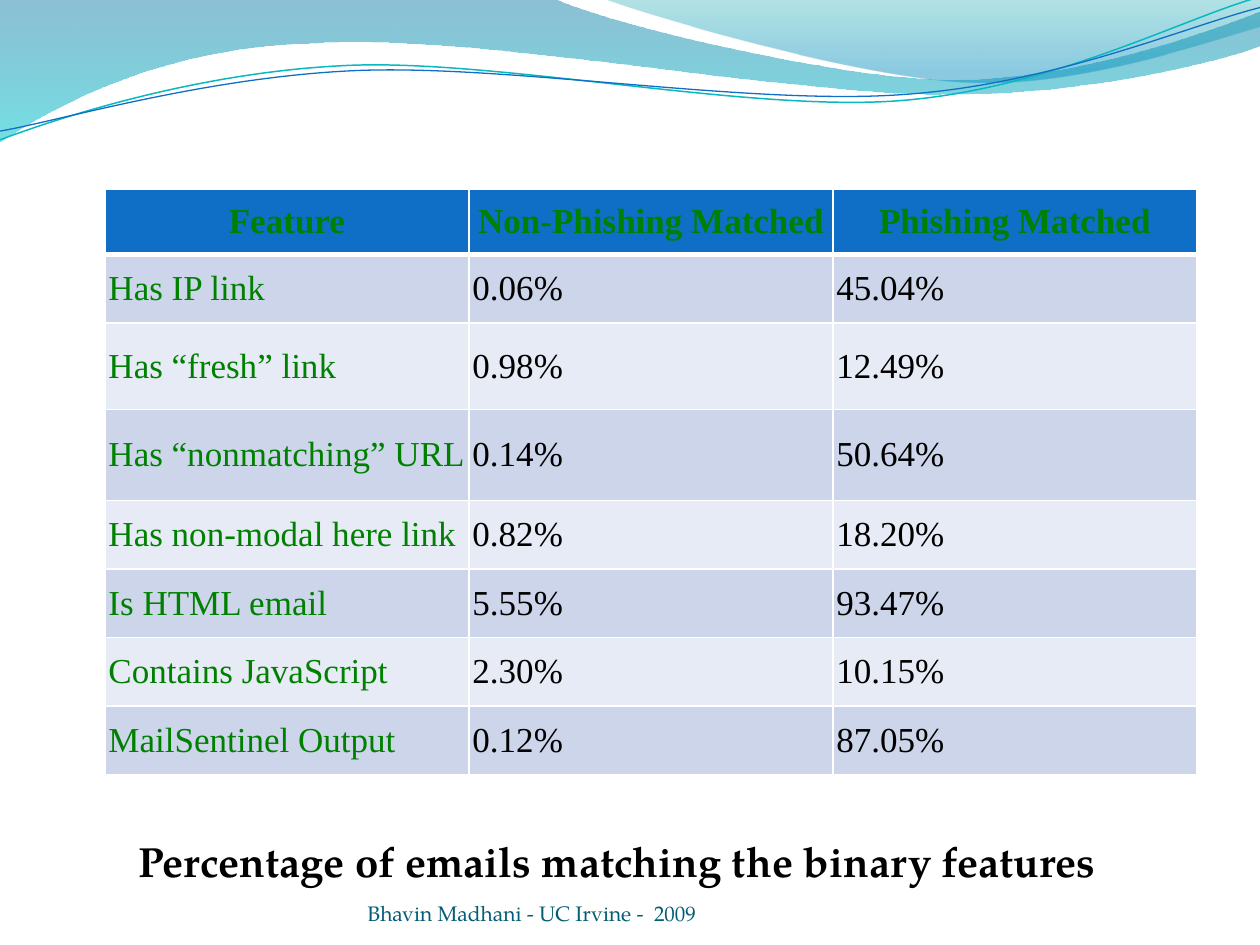
from lxml.etree import SubElement
from pptx import Presentation
from pptx.dml.color import RGBColor
from pptx.enum.text import MSO_ANCHOR as Anchor, MSO_AUTO_SIZE as AutoSize, PP_ALIGN as Align
from pptx.oxml.ns import qn
from pptx.util import Pt

COLORS = {
    "white": "FFFFFF", "black": "000000", "green": "008000", "footer": "045D75",
    "header": "0F6FC6", "odd": "CCD5EA", "even": "E7EBF5",
    "deep": "0074A1", "cyan": "00C6CF", "teal": "00A1A9", "sky": "008BBF",
    "aqua": "0AB8BF",
}
SERIF, TABLE_FONT = "TeX Gyre Pagella", "Times New Roman"

ROWS = [
    ("Feature", "Non-Phishing Matched", "Phishing Matched"),
    ("Has IP link", "0.06%", "45.04%"),
    ("Has “fresh” link", "0.98%", "12.49%"),
    ("Has “nonmatching” URL", "0.14%", "50.64%"),
    ("Has non-modal here link", "0.82%", "18.20%"),
    ("Is HTML email", "5.55%", "93.47%"),
    ("Contains JavaScript", "2.30%", "10.15%"),
    ("MailSentinel Output", "0.12%", "87.05%"),
]
ROW_HEIGHTS = [37.5, 39, 49.5, 52] + [39.2] * 4
CAPTION = "Percentage of emails matching the binary features"
FOOTER = "Bhavin Madhani - UC Irvine -  2009"

WAVES = [
    ([(0, 0), (316.8, -0.7), (342.7, 12.2, 478.1, 45.4, 545.8, 45.4),
      (614.2, 45.4, 689.8, 18.7, 720, 6.5), (720.7, 25.9),
      (707.8, 31.7, 626.4, 54.7, 537.1, 54), (447.8, 54, 275, 20.2, 185, 24.5),
      (92.9, 25.9, 33.1, 59.8, -0.7, 81.4), (0, 0)],
     [(0, "deep", 45), (1, "cyan", 55)]),
    ([(344.9, -0.7), (366.5, 7.9, 491, 44.6, 553.7, 46.8),
      (616.3, 49.7, 691.9, 23, 720, 15.1), (720, 0), (344.9, -0.7)],
     [(0, "teal", 30), (0.8, "sky", 45)]),
]
STRANDS = [
    ([(0, 79.9), (34.6, 67, 113.8, 41, 199.4, 37.4),
      (284.4, 33.8, 427, 64.1, 513.4, 57.6),
      (599.8, 51.1, 675.4, 10.8, 718.6, -1.4)], "aqua", 0.85),
    ([(0, 74.9), (33.8, 69.1, 118.1, 43.9, 203.8, 40.3),
      (290.2, 36.7, 429.8, 60.5, 516.2, 54),
      (601.9, 48.2, 677.5, 15.1, 720, 4.3)], "header", 0.75),
]


def rgb(name):
    return RGBColor.from_string(COLORS[name])


def add_outline(s, segments, close):
    points = [(Pt(seg[i]), Pt(seg[i + 1])) for seg in segments for i in range(0, len(seg), 2)]
    builder = s.shapes.build_freeform(*points[0], scale=1.0)
    builder.add_line_segments(points[1:], close=close)
    sp = builder.convert_to_shape()
    sp.shadow.inherit = False
    corners = iter(list(sp._element.spPr.iter(qn("a:lnTo"))))
    for seg in segments[1:]:
        first = next(corners)
        if len(seg) == 6:
            first.tag = qn("a:cubicBezTo")
            for _ in range(2):
                corner = next(corners)
                first.append(corner[0])
                corner.getparent().remove(corner)
    return sp


def add_wave(s, segments, stops):
    sp = add_outline(s, segments, True)
    sp.fill.gradient()
    sp.fill.gradient_angle = 270
    for stop, (position, color, _) in zip(sp.fill.gradient_stops, stops):
        stop.position = position
        stop.color.rgb = rgb(color)
    for clr, (_, _, opacity) in zip(sp._element.spPr.iter(qn("a:srgbClr")), stops):
        SubElement(clr, qn("a:alpha"), val=str(opacity * 1000))
    sp.line.fill.background()


def add_strand(s, segments, color, width):
    sp = add_outline(s, segments, False)
    sp.fill.background()
    sp.line.color.rgb = rgb(color)
    sp.line.width = Pt(width)


def style(p, font, size, color, bold=False):
    for r in p.runs:
        r.font.name, r.font.size, r.font.bold = font, Pt(size), bold
        r.font.color.rgb = rgb(color)


def set_borders(cell, row):
    tc_pr = cell._tc.get_or_add_tcPr()
    widths = {"L": 1, "R": 1, "T": 3 if row == 1 else 1, "B": 3 if row == 0 else 1}
    for i, (side, width) in enumerate(widths.items()):
        ln = SubElement(tc_pr, qn(f"a:ln{side}"), w=str(Pt(width)))
        SubElement(SubElement(ln, qn("a:solidFill")), qn("a:srgbClr"), val=COLORS["white"])
        tc_pr.insert(i, ln)


def add_feature_table(s):
    table = s.shapes.add_table(len(ROWS), len(ROWS[0]), Pt(60), Pt(108),
                               Pt(624), Pt(sum(ROW_HEIGHTS))).table
    for i, (texts, height) in enumerate(zip(ROWS, ROW_HEIGHTS)):
        table.rows[i].height = Pt(height)
        for j, text in enumerate(texts):
            cell = table.cell(i, j)
            cell.text = text
            cell.vertical_anchor = Anchor.MIDDLE
            cell.margin_left = cell.margin_right = Pt(2)
            cell.margin_top = cell.margin_bottom = Pt(2)
            cell.fill.solid()
            cell.fill.fore_color.rgb = rgb("header" if i == 0 else "odd" if i % 2 else "even")
            set_borders(cell, i)
            p = cell.text_frame.paragraphs[0]
            p.alignment = Align.LEFT if i else Align.CENTER
            style(p, TABLE_FONT, 20, "black" if i and j else "green", i == 0)


def add_caption(s):
    sp = s.placeholders[1]
    sp.left, sp.top, sp.width, sp.height = Pt(36), Pt(474), Pt(648), Pt(24)
    tf = sp.text_frame
    tf.text = CAPTION
    tf.auto_size = AutoSize.NONE
    tf.vertical_anchor = Anchor.TOP
    p = tf.paragraphs[0]
    p.space_before = Pt(4.8)
    p_pr = p._p.get_or_add_pPr()
    p_pr.set("marL", str(Pt(36)))
    p_pr.set("indent", "0")
    SubElement(p_pr, qn("a:buNone"))
    style(p, SERIF, 24, "black", True)


def add_footer(s):
    tf = s.shapes.add_textbox(Pt(210), Pt(500.5), Pt(264), Pt(28.5)).text_frame
    tf.text = FOOTER
    tf.word_wrap = True
    tf.vertical_anchor = Anchor.BOTTOM
    tf.margin_left = tf.margin_right = tf.margin_top = tf.margin_bottom = 0
    style(tf.paragraphs[0], SERIF, 12, "footer")


def main():
    """Build the slide on binary phishing features."""
    prs = Presentation()
    prs.slide_width, prs.slide_height = Pt(720), Pt(540)
    s = prs.slides.add_slide(prs.slide_layouts[1])
    title = s.shapes.title._element
    title.getparent().remove(title)
    for wave in WAVES:
        add_wave(s, *wave)
    for strand in STRANDS:
        add_strand(s, *strand)
    add_caption(s)
    add_footer(s)
    add_feature_table(s)
    prs.save("out.pptx")


if __name__ == "__main__":
    main()
